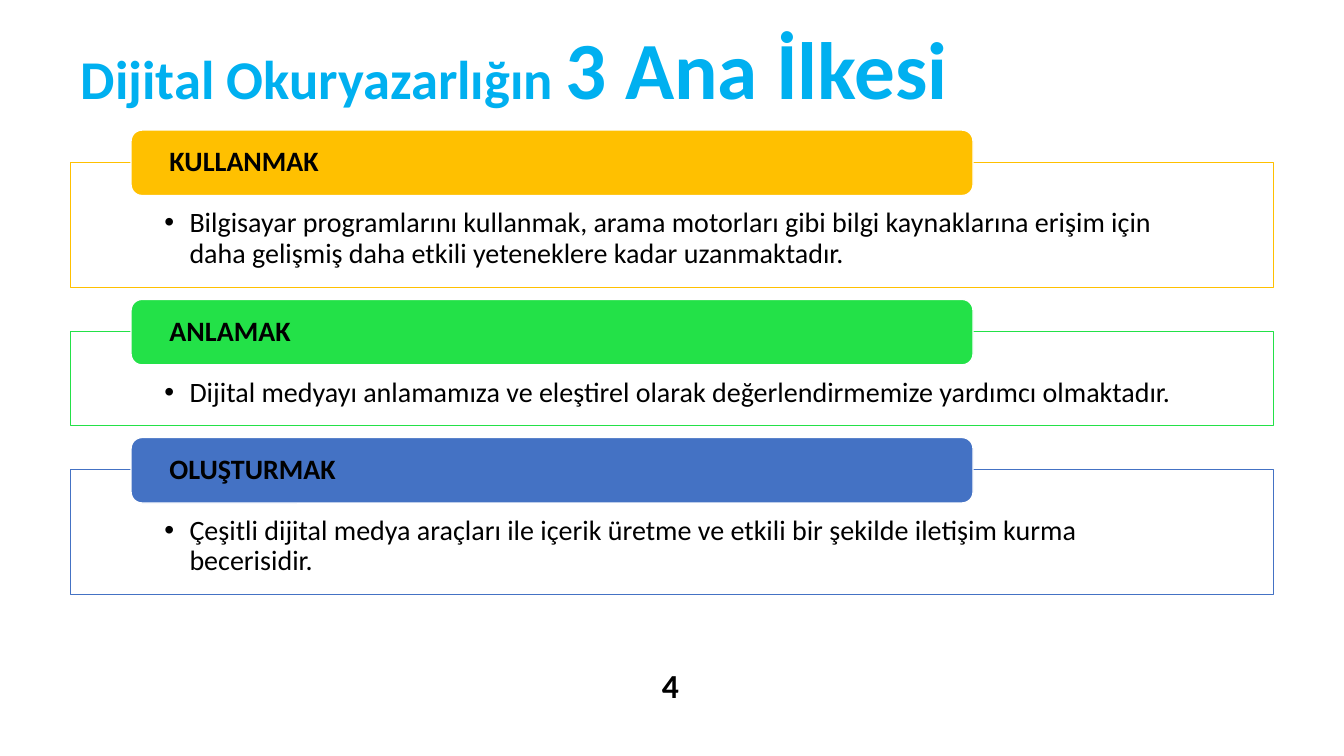
from lxml import etree
from pptx import Presentation
from pptx import util as u
from pptx.dml.color import RGBColor
from pptx.enum import shapes, text
from pptx.oxml.ns import qn

FONT = "Calibri"
COLORS = {
    "title": "00B0F0",
    "text": "000000",
    "white": "FFFFFF",
    "use": "FFC000",
    "understand": "23E148",
    "create": "4472C4",
}
# Heading, explanation, colour, height of the outlined box
PRINCIPLES = [
    ("KULLANMAK",
     "Bilgisayar programlarını kullanmak, arama motorları gibi bilgi kaynaklarına "
     "erişim için daha gelişmiş daha etkili yeteneklere kadar uzanmaktadır.",
     "use", 1.24),
    ("ANLAMAK",
     "Dijital medyayı anlamamıza ve eleştirel olarak değerlendirmemize yardımcı olmaktadır.",
     "understand", 0.93),
    ("OLUŞTURMAK",
     "Çeşitli dijital medya araçları ile içerik üretme ve etkili bir şekilde "
     "iletişim kurma becerisidir.",
     "create", 1.24),
]
LABEL_HEIGHT = 0.65
LABEL_RISE = 0.32
GAP = 0.12


def rgb(name):
    return RGBColor.from_string(COLORS[name])


def add_run(paragraph, words, size, color="text", bold=False):
    run = paragraph.add_run()
    run.text = words
    run.font.name = FONT
    run.font.size = u.Pt(size)
    run.font.bold = bold
    run.font.color.rgb = rgb(color)


def set_frame(shape, anchor, margins):
    frame = shape.text_frame
    frame.word_wrap = True
    frame.auto_size = text.MSO_AUTO_SIZE.NONE
    frame.vertical_anchor = anchor
    (frame.margin_left, frame.margin_top,
     frame.margin_right, frame.margin_bottom) = [u.Inches(m) for m in margins]
    return frame.paragraphs[0]


def add_box(slide, kind, box, fill, line):
    shape = slide.shapes.add_shape(kind, *[u.Inches(v) for v in box])
    shape.shadow.inherit = False
    shape.fill.solid()
    shape.fill.fore_color.rgb = rgb(fill)
    shape.line.color.rgb = rgb(line)
    shape.line.width = u.Pt(1)
    return shape


def add_bullet(paragraph, indent):
    properties = paragraph._p.get_or_add_pPr()
    properties.set("marL", str(u.Inches(indent)))
    properties.set("indent", str(-u.Inches(indent)))
    etree.SubElement(properties, qn("a:buFont")).set("typeface", "Arial")
    etree.SubElement(properties, qn("a:buChar")).set("char", "•")


def add_title(slide, left, top, width, height):
    title = slide.shapes.title
    title.left, title.top = u.Inches(left), u.Inches(top)
    title.width, title.height = u.Inches(width), u.Inches(height)
    paragraph = set_frame(title, text.MSO_ANCHOR.TOP, (0.1, 0.05, 0.1, 0.05))
    paragraph.alignment = text.PP_ALIGN.LEFT
    paragraph.line_spacing = 0.9
    add_run(paragraph, "Dijital Okuryazarlığın ", 39, "title", True)
    add_run(paragraph, "3 Ana İlkesi", 58, "title", True)


def add_principle(slide, left, top, width, height, heading, explanation, color):
    # Outlined box with the explanation
    panel = add_box(slide, shapes.MSO_SHAPE.RECTANGLE,
                    (left, top + LABEL_RISE, width, height), "white", color)
    fill_color = panel.fill._xPr.find(qn("a:solidFill"))[0]
    etree.SubElement(fill_color, qn("a:alpha")).set("val", "90000")
    paragraph = set_frame(panel, text.MSO_ANCHOR.TOP, (0.93, 0.46, 0.93, 0.16))
    add_bullet(paragraph, 0.25)
    paragraph.alignment = text.PP_ALIGN.LEFT
    paragraph.line_spacing = 0.9
    add_run(paragraph, explanation, 20)

    # Coloured heading over its top edge
    label = add_box(slide, shapes.MSO_SHAPE.ROUNDED_RECTANGLE,
                    (left + 0.6, top, width * 0.7, LABEL_HEIGHT), color, "white")
    paragraph = set_frame(label, text.MSO_ANCHOR.MIDDLE, (0.35, 0, 0.35, 0))
    paragraph.alignment = text.PP_ALIGN.LEFT
    paragraph.line_spacing = 0.9
    add_run(paragraph, heading, 20, bold=True)


def add_principles(slide, left, top, width):
    for heading, explanation, color, height in PRINCIPLES:
        add_principle(slide, left, top, width, height, heading, explanation, color)
        top += LABEL_RISE + height + GAP


def add_page_number(slide, left, top, width, height):
    number = slide.shapes.add_textbox(*[u.Inches(v) for v in (left, top, width, height)])
    paragraph = set_frame(number, text.MSO_ANCHOR.MIDDLE, (0.1, 0.05, 0.1, 0.05))
    paragraph.alignment = text.PP_ALIGN.CENTER
    add_run(paragraph, "4", 24, bold=True)


def main():
    presentation = Presentation()
    presentation.slide_width = u.Inches(13.33)
    presentation.slide_height = u.Inches(7.5)
    slide = presentation.slides.add_slide(presentation.slide_layouts[5])
    add_title(slide, 0.7, 0.24, 11.5, 1)
    add_principles(slide, 0.7, 1.29, 11.93)
    add_page_number(slide, 6.36, 6.62, 0.58, 0.35)
    presentation.save("out.pptx")


if __name__ == "__main__":
    main()
